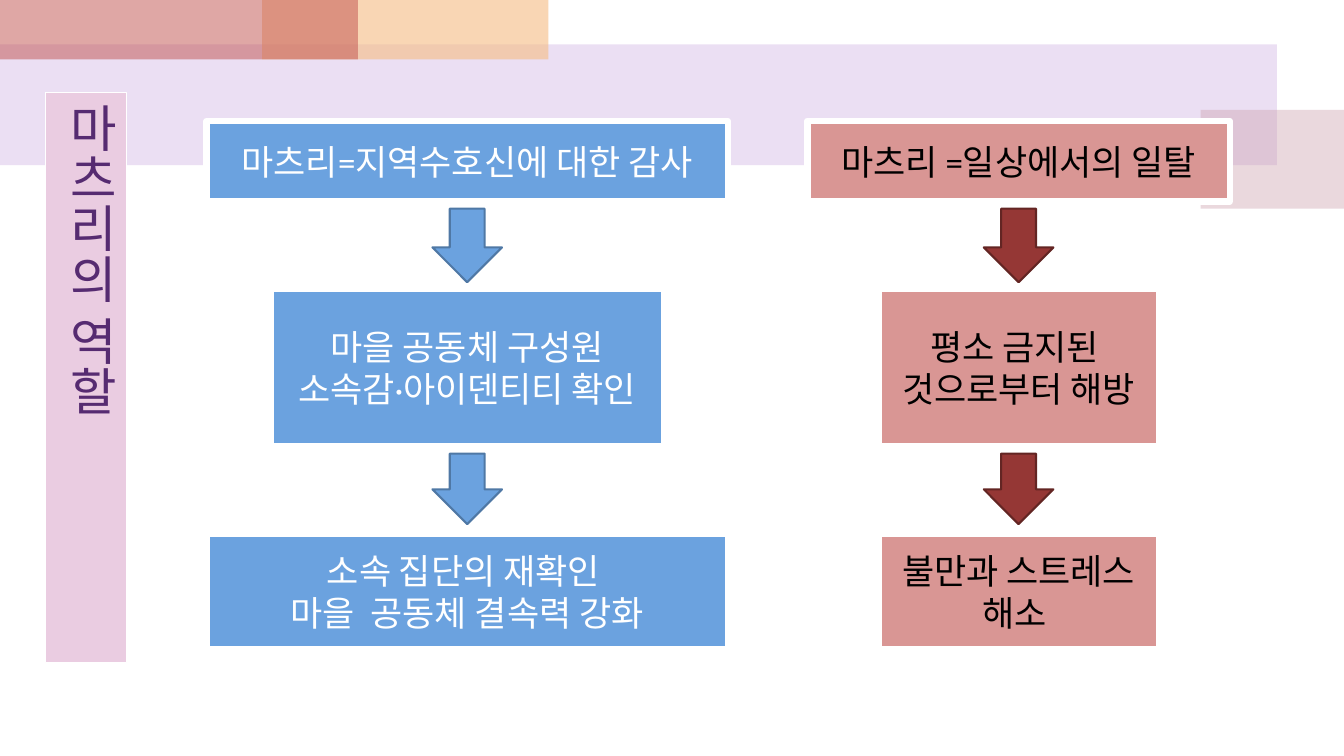
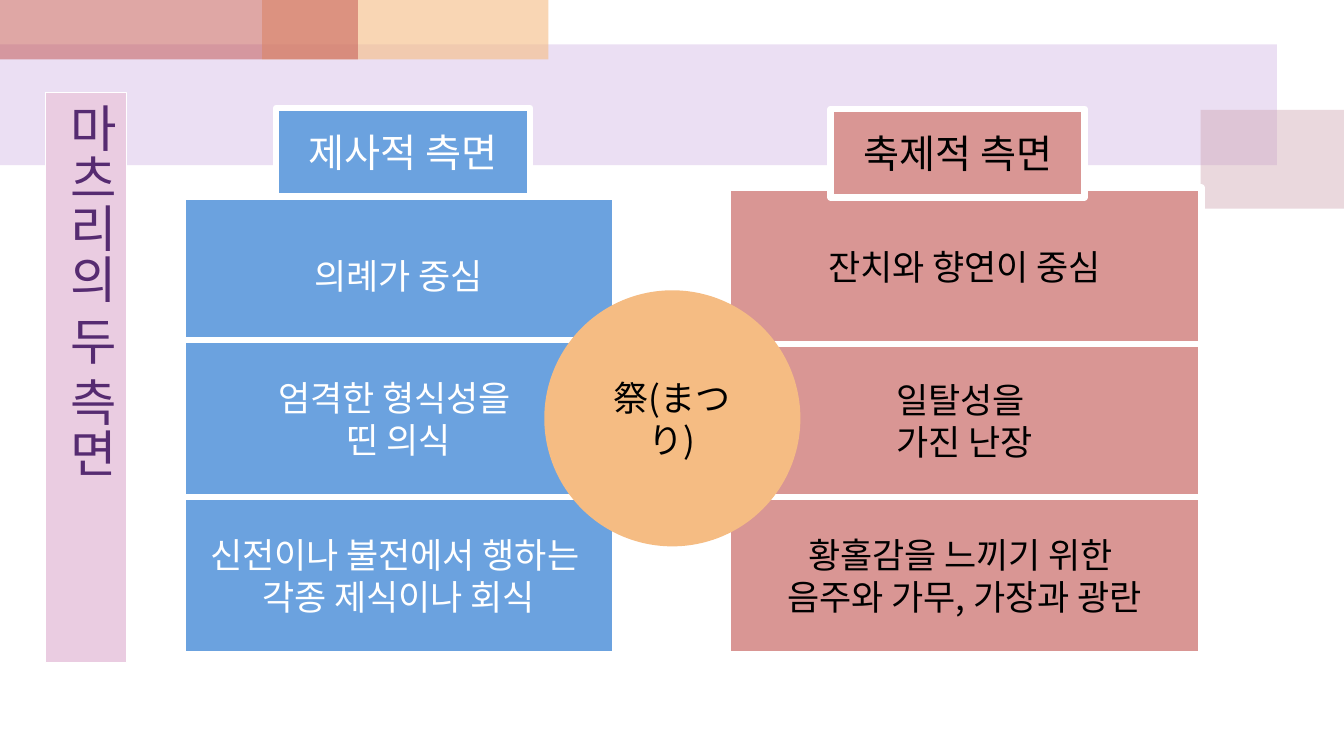
from dataclasses import dataclass
from typing import NamedTuple

from lxml import etree
from pptx import Presentation
from pptx import util as u
from pptx.dml.color import RGBColor
from pptx.enum import shapes, text
from pptx.oxml import ns

WIDE, HIGH = u.Inches(13.333), u.Inches(7.5)
COLS, ROWS = 80, 45
KIND = shapes.MSO_SHAPE

WHITE = RGBColor(0xFF, 0xFF, 0xFF)
BLACK = RGBColor(0x00, 0x00, 0x00)
BLUE = RGBColor(0x6B, 0xA2, 0xDF)
NAVY = RGBColor(0x4F, 0x78, 0xA5)
ROSE = RGBColor(0xD9, 0x96, 0x94)
BRICK = RGBColor(0x95, 0x37, 0x35)
MAROON = RGBColor(0x63, 0x25, 0x23)
LILAC = RGBColor(0xBF, 0x98, 0xD8)
MAUVE = RGBColor(0xCC, 0x9E, 0xAC)
PEACH = RGBColor(0xF5, 0xBC, 0x83)
RED = RGBColor(0xC0, 0x50, 0x4D)
PINK = RGBColor(0xEA, 0xCC, 0xE1)
PLUM = RGBColor(0x56, 0x2B, 0x71)

LATIN = "Calibri"
ASIAN = "Noto Sans CJK KR"


class Area(NamedTuple):
    left: float
    top: float
    wide: float
    high: float


class Row(NamedTuple):
    top: float
    high: float


class Band(NamedTuple):
    area: Area
    fill: RGBColor
    alpha: int


@dataclass(frozen=True)
class Look:
    fill: RGBColor
    line: RGBColor
    width: float


@dataclass(frozen=True)
class Type:
    color: RGBColor
    font: str = ASIAN
    size: int = 25


@dataclass(frozen=True)
class Flow:
    mid: float
    box: Look
    arrow: Look
    ink: RGBColor
    steps: tuple[tuple[float, tuple[str, ...]], ...]


@dataclass(frozen=True)
class Stack:
    left: float
    wide: float
    look: Look
    ink: RGBColor
    rows: tuple[Row, ...]
    cells: tuple[tuple[str, ...], ...]
    head: str
    place: Area
    font: str


BANDS = (
    Band(Area(0, 2.64, 76, 7.2), LILAC, 30),
    Band(Area(71.46, 6.54, 8.54, 5.88), MAUVE, 40),
    Band(Area(15.6, 0, 17.04, 3.54), PEACH, 60),
    Band(Area(0, 0, 21.3, 3.54), RED, 50),
)
TITLE = Area(2.7, 5.52, 4.86, 33.9)
PANEL = Look(PINK, WHITE, 0.75)
COOL = Look(BLUE, WHITE, 4.5)
WARM = Look(ROSE, WHITE, 4.5)
DISC = Look(PEACH, PEACH, 1.5)

STEPS = (Row(7.2, 4.8), Row(17.22, 9.36), Row(31.8, 6.84))
GAPS = (Row(12.42, 4.38), Row(27, 4.2))
SHAFT = 4.14

FLOWS = (
    Flow(27.81, COOL, Look(BLUE, NAVY, 1.5), WHITE, (
        (31.02, ("마츠리=지역수호신에 대한 감사",)),
        (23.4, ("마을 공동체 구성원", "소속감·아이덴티티 확인")),
        (31.02, ("소속 집단의 재확인 ", "마을  공동체 결속력 강화")),
    )),
    Flow(60.63, WARM, Look(BRICK, MAROON, 1.5), BLACK, (
        (25.14, ("마츠리 =일상에서의 일탈",)),
        (16.68, ("평소 금지된 ", "것으로부터 해방")),
        (16.68, ("불만과 스트레스 해소 ",)),
    )),
)

STACKS = (
    Stack(10.86, 25.74, COOL, WHITE,
          (Row(11.7, 9.36), Row(20.22, 9.36), Row(29.58, 9.36)),
          (("의례가 중심",),
           ("엄격한 형식성을 ", "띤 의식"),
           ("신전이나 불전에서 행하는 ", "각종 제식이나 회식")),
          "제사적 측면", Area(16.44, 6.42, 15.12, 5.28), ASIAN),
    Stack(43.32, 28.2, WARM, BLACK,
          (Row(11.16, 9.36), Row(20.46, 9.12), Row(29.58, 9.36)),
          (("잔치와 향연이 중심",),
           ("일탈성을 ", "가진 난장"),
           ("황홀감을 느끼기 위한 ", "음주와 가무, 가장과 광란")),
          "축제적 측면", Area(49.44, 6.48, 15.12, 5.28), LATIN),
)
HUB = Area(32.46, 17.34, 15.12, 15.12)


def draw(slide, kind: KIND, area: Area, fill: RGBColor):
    shape = slide.shapes.add_shape(
        kind,
        round(area.left * WIDE / COLS), round(area.top * HIGH / ROWS),
        round(area.wide * WIDE / COLS), round(area.high * HIGH / ROWS))
    shape.shadow.inherit = False
    shape.fill.solid()
    shape.fill.fore_color.rgb = fill
    return shape


def block(slide, kind: KIND, area: Area, look: Look):
    shape = draw(slide, kind, area, look.fill)
    shape.line.color.rgb = look.line
    shape.line.width = u.Pt(look.width)
    return shape


def write(shape, lines: tuple[str, ...], style: Type,
          align=text.PP_ALIGN.CENTER, anchor=text.MSO_ANCHOR.MIDDLE) -> None:
    frame = shape.text_frame
    frame.word_wrap = True
    frame.vertical_anchor = anchor
    for num, line in enumerate(lines):
        para = frame.add_paragraph() if num else frame.paragraphs[0]
        para.alignment = align
        run = para.add_run()
        run.text = line
        run.font.size = u.Pt(style.size)
        run.font.color.rgb = style.color
        run.font.name = style.font
        props = run.font._element
        etree.SubElement(props, ns.qn("a:ea"), typeface=ASIAN)


def label(slide, area: Area, look: Look, lines: tuple[str, ...],
          style: Type, kind: KIND = KIND.RECTANGLE) -> None:
    write(block(slide, kind, area, look), lines, style)


def share(slide) -> None:
    tree = slide.slide_layout.shapes.element
    for num, band in enumerate(BANDS, 20):
        shape = draw(slide, KIND.RECTANGLE, band.area, band.fill)
        shape.line.fill.background()
        tint = next(shape.element.iter(ns.qn("a:srgbClr")))
        etree.SubElement(tint, ns.qn("a:alpha"), val=str(band.alpha * 1000))
        next(shape.element.iter(ns.qn("p:cNvPr"))).set("id", str(num))
        tree.append(shape.element)


def title(slide, words: str) -> None:
    shape = block(slide, KIND.RECTANGLE, TITLE, PANEL)
    write(shape, (words,), Type(PLUM, LATIN, 36),
          text.PP_ALIGN.LEFT, text.MSO_ANCHOR.TOP)
    next(shape.element.iter(ns.qn("a:bodyPr"))).set("vert", "eaVert")


def chain(slide, flow: Flow) -> None:
    for gap in GAPS:
        area = Area(flow.mid - SHAFT / 2, gap.top, SHAFT, gap.high)
        block(slide, KIND.DOWN_ARROW, area, flow.arrow)
    for row, (wide, lines) in zip(STEPS, flow.steps):
        area = Area(flow.mid - wide / 2, row.top, wide, row.high)
        label(slide, area, flow.box, lines, Type(flow.ink, LATIN))


def pile(slide, stack: Stack) -> None:
    for row, lines in zip(stack.rows, stack.cells):
        area = Area(stack.left, row.top, stack.wide, row.high)
        label(slide, area, stack.look, lines, Type(stack.ink))
    label(slide, stack.place, stack.look, (stack.head,),
          Type(stack.ink, stack.font, 28))


def main() -> None:
    deck = Presentation()
    deck.slide_width, deck.slide_height = WIDE, HIGH
    blank = deck.slide_layouts[6]

    roles = deck.slides.add_slide(blank)
    share(roles)
    title(roles, "마츠리의 역할")
    for flow in FLOWS:
        chain(roles, flow)

    sides = deck.slides.add_slide(blank)
    title(sides, "마츠리의 두 측면")
    for stack in STACKS:
        pile(sides, stack)
    label(sides, HUB, DISC, ("祭(まつり)",), Type(BLACK), KIND.OVAL)

    deck.save("out.pptx")


if __name__ == "__main__":
    main()
